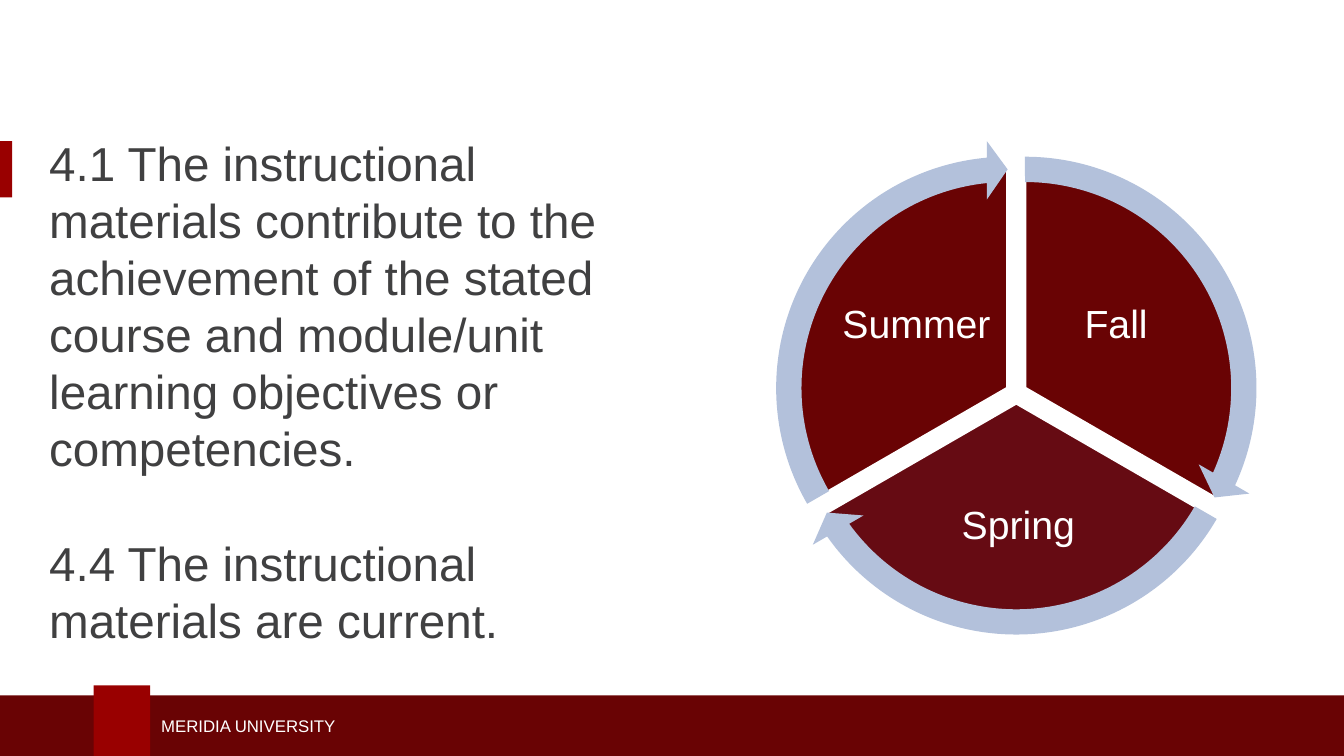
from dataclasses import dataclass
from math import cos, radians, sin

from pptx import Presentation
from pptx.dml.color import RGBColor
from pptx.enum.shapes import MSO_SHAPE
from pptx.enum.text import MSO_ANCHOR, PP_ALIGN
from pptx.util import Inches, Pt

RECTANGLE, PIE, ARROW = MSO_SHAPE.RECTANGLE, MSO_SHAPE.PIE, MSO_SHAPE.CIRCULAR_ARROW
LEFT, CENTER = PP_ALIGN.LEFT, PP_ALIGN.CENTER
MIDDLE = MSO_ANCHOR.MIDDLE


@dataclass(frozen=True)
class Theme:
    font: str = "Arial"
    crimson: str = "990000"
    dark_red: str = "690304"
    wine: str = "660B13"
    pale_blue: str = "B3C1DB"
    ink: str = "404041"
    white: str = "FFFFFF"
    body_size: int = 34
    label_size: int = 28
    footer_size: int = 12


THEME = Theme()
WIDTH, HEIGHT = 13.33, 7.5

STANDARDS = [
    "4.1 The instructional materials contribute to the achievement of the stated "
    "course and module/unit learning objectives or competencies.",
    "4.4 The instructional materials are current.",
]
FOOTER = "MERIDIA UNIVERSITY"

# left, top, width, height, colour
BRAND_BLOCKS = [
    (0, 1.4, 0.12, 0.56, THEME.crimson),
    (0, 6.9, WIDTH, HEIGHT - 6.9, THEME.dark_red),
    (0.93, 6.8, 0.56, HEIGHT - 6.8, THEME.crimson),
]

# The wheel: each sector is pushed outward from the hub along its middle angle.
HUB = (10.08, 3.9)
PUSH = 0.1
PIE_SIZE, ARROW_SIZE = 4.37, 4.92
ARROW_BAND, ARROW_HEAD, ARROW_TIP = 0.051, 0.059, 3.275
# Angles of adjustments are in units of 0.6 per degree.
SEASONS = [
    {"name": "Fall", "middle": -30, "fill": THEME.dark_red, "pie": (162, 18),
     "arrow": (14.73, 161.99), "label": (0.99, -0.67, 1.56, 1.3)},
    {"name": "Spring", "middle": 90, "fill": THEME.wine, "pie": (18, 90),
     "arrow": (86.72, 18.01), "label": (0.02, 1.33, 2.34, 1.15)},
    {"name": "Summer", "middle": 210, "fill": THEME.dark_red, "pie": (90, 162),
     "arrow": (158.73, 90), "label": (-0.99, -0.67, 1.56, 1.3)},
]


def centred(x, y, width, height):
    """Return left, top, width, height of a box around a centre."""
    return x - width / 2, y - height / 2, width, height


def add_block(page, kind, box, fill, adjustments=(), outline=None):
    shape = page.shapes.add_shape(kind, *map(Inches, box))
    shape.shadow.inherit = False
    shape.fill.solid()
    shape.fill.fore_color.rgb = RGBColor.from_string(fill)
    if outline:
        shape.line.color.rgb = RGBColor.from_string(outline)
        shape.line.width = Pt(2)
    else:
        shape.line.fill.background()
    for index, value in enumerate(adjustments):
        shape.adjustments[index] = value


def add_text(page, box, lines, size, color, align=LEFT, margin=None, **spacing):
    frame = page.shapes.add_textbox(*map(Inches, box)).text_frame
    frame.word_wrap = True
    frame.vertical_anchor = MIDDLE
    if margin is not None:
        for side in ("left", "top", "right", "bottom"):
            setattr(frame, f"margin_{side}", Inches(margin))
    for index, line in enumerate(lines):
        para = frame.add_paragraph() if index else frame.paragraphs[0]
        para.alignment = align
        for name, value in spacing.items():
            if index or name != "space_before":
                setattr(para, name, value)
        span = para.add_run()
        span.text = line
        span.font.name = THEME.font
        span.font.size = Pt(size)
        span.font.color.rgb = RGBColor.from_string(color)


def add_wheel(page):
    centres = []
    for season in SEASONS:
        angle = radians(season["middle"])
        centre = HUB[0] + PUSH * cos(angle), HUB[1] + PUSH * sin(angle)
        centres.append(centre)
        add_block(page, PIE, centred(*centre, PIE_SIZE, PIE_SIZE),
                  season["fill"], season["pie"], THEME.white)
        dx, dy, width, height = season["label"]
        add_text(page, centred(HUB[0] + dx, HUB[1] + dy, width, height),
                 [season["name"]], THEME.label_size, THEME.white, CENTER,
                 margin=0.04, line_spacing=0.9)
    for season, centre in zip(SEASONS, centres):
        add_block(page, ARROW, centred(*centre, ARROW_SIZE, ARROW_SIZE), THEME.pale_blue,
                  (ARROW_BAND, ARROW_TIP, *season["arrow"], ARROW_HEAD))


def main():
    deck = Presentation()
    deck.slide_width, deck.slide_height = Inches(WIDTH), Inches(HEIGHT)
    page = deck.slides.add_slide(deck.slide_layouts[6])
    for *box, fill in BRAND_BLOCKS:
        add_block(page, RECTANGLE, box, fill)
    add_text(page, (1.5, 7.05, 5.27, 0.3), [FOOTER], THEME.footer_size, THEME.white)
    add_text(page, (0.39, 2.13, 6.37, 3.49), STANDARDS, THEME.body_size, THEME.ink,
             space_before=Pt(41))
    add_wheel(page)
    deck.save("out.pptx")


if __name__ == "__main__":
    main()
